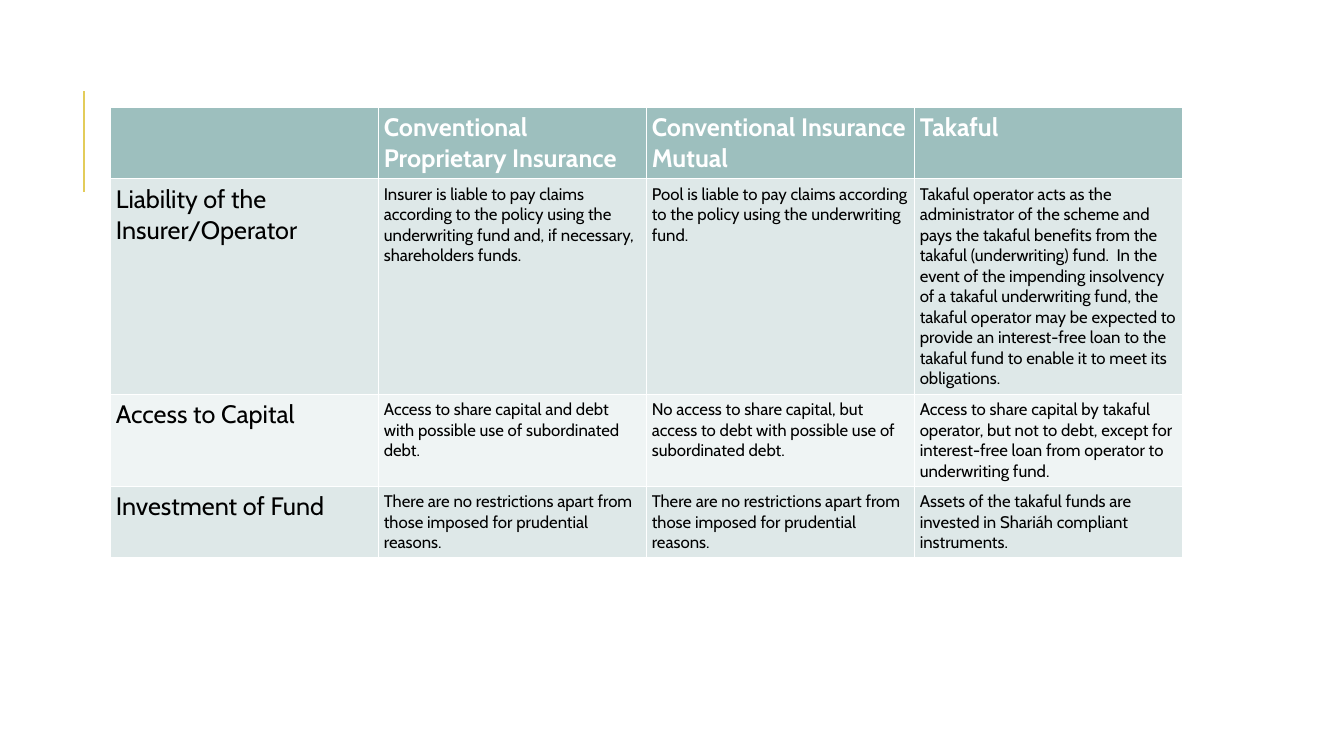
from lxml.etree import SubElement
from pptx import Presentation
from pptx.dml.color import RGBColor
from pptx.enum.shapes import MSO_CONNECTOR
from pptx.oxml.ns import qn
from pptx.util import Pt


def rgb(value):
    return RGBColor.from_string(value)


ROWS = [
    ["", "Conventional Proprietary Insurance", "Conventional Insurance Mutual", "Takaful"],
    ["Liability of the Insurer/Operator",
     "Insurer is liable to pay claims according to the policy using the underwriting fund "
     "and, if necessary, shareholders funds.",
     "Pool is liable to pay claims according to the policy using the underwriting fund.",
     "Takaful operator acts as the administrator of the scheme and pays the takaful benefits "
     "from the takaful (underwriting) fund.  In the event of the impending insolvency of a "
     "takaful underwriting fund, the takaful operator may be expected to provide an "
     "interest-free loan to the takaful fund to enable it to meet its obligations."],
    ["Access to Capital",
     "Access to share capital and debt with possible use of subordinated debt.",
     "No access to share capital, but access to debt with possible use of subordinated debt.",
     "Access to share capital by takaful operator, but not to debt, except for interest-free "
     "loan from operator to underwriting fund."],
    ["Investment of Fund",
     "There are no restrictions apart from those imposed for prudential reasons.",
     "There are no restrictions apart from those imposed for prudential reasons.",
     "Assets of the takaful funds are invested in Shariáh compliant instruments."],
]
FILLS = ["9DBFBE", "DEE8E8", "EFF4F4", "DEE8E8"]

prs = Presentation()
prs.slide_width, prs.slide_height = Pt(960), Pt(540)
s = prs.slides.add_slide(prs.slide_layouts[6])

accent = s.shapes.add_connector(MSO_CONNECTOR.STRAIGHT, Pt(60), Pt(136.8), Pt(60), Pt(64.8))
accent.line.color.rgb = rgb("E3CC5A")
accent.line.width = Pt(1.5)
SubElement(accent.element.spPr, qn("a:effectLst"))

table = s.shapes.add_table(4, 4, Pt(79.2), Pt(76.6), Pt(765.6), Pt(116.8)).table

for i, (texts, fill) in enumerate(zip(ROWS, FILLS)):
    for j, text in enumerate(texts):
        cell = table.cell(i, j)
        cell.fill.solid()
        cell.fill.fore_color.rgb = rgb(fill)
        cell.margin_left = cell.margin_right = Pt(3.6)
        cell.margin_top = cell.margin_bottom = Pt(3.6)
        cell.text = text
        font = cell.text_frame.paragraphs[0].font
        font.name = "Cabin"
        font.size = Pt(18 if i == 0 or j == 0 else 12)
        font.bold = i == 0
        font.color.rgb = rgb("FFFFFF" if i == 0 else "000000")

prs.save("out.pptx")
